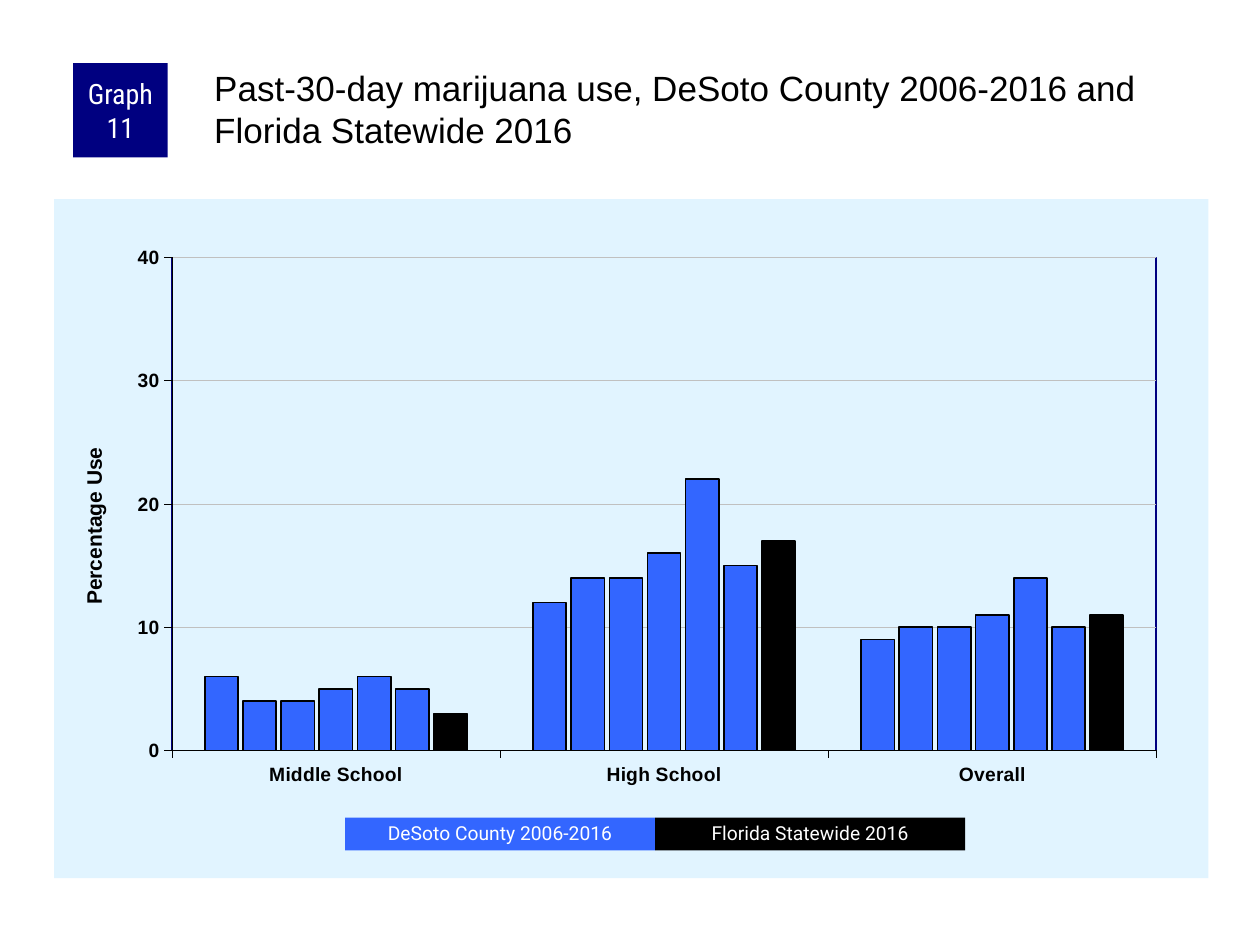
from dataclasses import dataclass

from lxml import etree
from pptx import Presentation
from pptx.chart import data as cd
from pptx.dml.color import RGBColor
from pptx.enum import chart as ch, shapes, text
from pptx.oxml import parse_xml
from pptx.oxml import ns
from pptx.util import Inches, Pt


@dataclass(frozen=True)
class Theme:
    navy: str = "000080"
    blue: str = "3366FF"
    black: str = "000000"
    white: str = "FFFFFF"
    pale: str = "E1F4FF"
    grid: str = "C0C0C0"
    sans: str = "Arial"
    label: str = "Roboto"
    badge: str = "Roboto Condensed"
    title_size: int = 20
    badge_size: int = 16
    axis_title_size: int = 12
    axis_size: int = 11
    chart_size: int = 8


THEME = Theme()
CATEGORIES = ["Middle School", "High School", "Overall"]
COUNTY = [(6, 12, 9), (4, 14, 10), (4, 14, 10), (5, 16, 11), (6, 22, 14), (5, 15, 10)]
STATE = (3, 17, 11)


def set_font(font, name, size, color, bold=False):
    font.name, font.size, font.bold = name, Pt(size), bold
    font.color.rgb = RGBColor.from_string(color)


def set_line(line, color, width):
    line.color.rgb = RGBColor.from_string(color)
    line.width = Pt(width)


def add_title(s, words, left, top, width, height):
    sp = s.shapes.title
    sp.left, sp.top, sp.width, sp.height = map(Inches, (left, top, width, height))
    tf = sp.text_frame
    tf.text = words
    tf.word_wrap = True
    tf.auto_size = text.MSO_AUTO_SIZE.NONE
    tf.vertical_anchor = text.MSO_ANCHOR.TOP
    tf.margin_left = tf.margin_top = Inches(0.03)
    tf.margin_right = tf.margin_bottom = 0
    p = tf.paragraphs[0]
    p.alignment = text.PP_ALIGN.LEFT
    set_font(p.font, THEME.sans, THEME.title_size, THEME.black)


def add_box(s, words, left, top, width, height, fill, font, size, spacing=1.0):
    sp = s.shapes.add_shape(shapes.MSO_SHAPE.RECTANGLE,
                            *map(Inches, (left, top, width, height)))
    sp.shadow.inherit = False
    sp.fill.solid()
    sp.fill.fore_color.rgb = RGBColor.from_string(fill)
    sp.line.fill.background()
    tf = sp.text_frame
    tf.text = words
    tf.word_wrap = True
    tf.vertical_anchor = text.MSO_ANCHOR.MIDDLE
    tf.margin_left = tf.margin_right = Inches(0.05)
    tf.margin_top = tf.margin_bottom = 0
    p = tf.paragraphs[0]
    p.alignment = text.PP_ALIGN.CENTER
    p.line_spacing = spacing
    set_font(p.font, font, size, THEME.white)


def set_layout(parent, index, target="", **sizes):
    """Place a chart part by fractions of the chart's size."""
    for old in parent.findall(ns.qn("c:layout")):
        parent.remove(old)
    layout = etree.Element(ns.qn("c:layout"))
    manual = etree.SubElement(layout, ns.qn("c:manualLayout"))
    values = {"xMode": "edge", "yMode": "edge", **sizes}
    if target:
        values = {"layoutTarget": target, **values}
    for name, value in values.items():
        etree.SubElement(manual, ns.qn(f"c:{name}")).set("val", str(value))
    parent.insert(index, layout)


def area_format(fill, line):
    """Shape properties for a chart area; None means no paint."""
    def paint(color):
        return f'<a:solidFill><a:srgbClr val="{color}"/></a:solidFill>' if color else "<a:noFill/>"
    return parse_xml(f'<c:spPr {ns.nsdecls("c", "a")}>{paint(fill)}'
                     f'<a:ln w="{Pt(1)}">{paint(line)}</a:ln></c:spPr>')


def format_axis(axis):
    axis.major_tick_mark = ch.XL_TICK_MARK.OUTSIDE
    axis.minor_tick_mark = ch.XL_TICK_MARK.NONE
    set_font(axis.tick_labels.font, THEME.sans, THEME.axis_size, THEME.black, True)
    set_line(axis.format.line, THEME.black, 0.25)


def format_value_axis(axis):
    format_axis(axis)
    axis.minimum_scale, axis.maximum_scale, axis.major_unit = 0, 40, 10
    axis.has_major_gridlines = True
    set_line(axis.major_gridlines.format.line, THEME.grid, 0.25)
    tf = axis.axis_title.text_frame
    tf.text = "Percentage Use"
    set_font(tf.paragraphs[0].font, THEME.sans, THEME.axis_title_size, THEME.black, True)
    tf._txBody.bodyPr.set("rot", "-5400000")
    tf._txBody.bodyPr.set("vert", "horz")
    set_layout(axis.axis_title._element, 1, x=0.02, y=0.36)


def add_use_chart(s, left, top, width, height):
    data = cd.CategoryChartData(number_format="0")
    data.categories = CATEGORIES
    for number, values in enumerate(COUNTY + [STATE], 1):
        data.add_series(f"Series {number}", values)
    chart = s.shapes.add_chart(ch.XL_CHART_TYPE.COLUMN_CLUSTERED,
                               *map(Inches, (left, top, width, height)), data).chart
    chart.has_legend = chart.has_title = False
    set_font(chart.font, THEME.sans, THEME.chart_size, THEME.black)
    format_axis(chart.category_axis)
    format_value_axis(chart.value_axis)

    plot = chart.plots[0]
    plot.gap_width, plot.overlap, plot.vary_by_categories = 200, -15, False
    colors = [THEME.blue] * len(COUNTY) + [THEME.black]
    for series, color in zip(plot.series, colors):
        series.format.fill.solid()
        series.format.fill.fore_color.rgb = RGBColor.from_string(color)
        set_line(series.format.line, THEME.black, 1)

    space = chart._chartSpace
    area = space.chart.plotArea
    set_layout(area, 0, "inner", x=0.102, y=0.086, w=0.853, h=0.726)
    area.append(area_format(None, THEME.navy))
    space.chart.addnext(area_format(THEME.pale, None))


def main():
    prs = Presentation()
    prs.slide_width, prs.slide_height = Inches(10), Inches(7.5)
    s = prs.slides.add_slide(prs.slide_layouts[5])
    add_use_chart(s, 0.43, 1.58, 9.16, 5.39)
    add_box(s, "Graph 11", 0.58, 0.5, 0.75, 0.75, THEME.navy, THEME.badge, THEME.badge_size)
    add_title(s, "Past-30-day marijuana use, DeSoto County 2006-2016 and Florida Statewide 2016",
              1.67, 0.5, 7.92, 0.83)
    key = [("DeSoto County 2006-2016", THEME.blue), ("Florida Statewide 2016", THEME.black)]
    key_width = 2.46
    for i, (words, color) in enumerate(key):
        add_box(s, words, 2.74 + i * key_width, 6.49, key_width, 0.26, color,
                THEME.label, THEME.axis_size, 0.9)
    prs.save("out.pptx")


if __name__ == "__main__":
    main()
